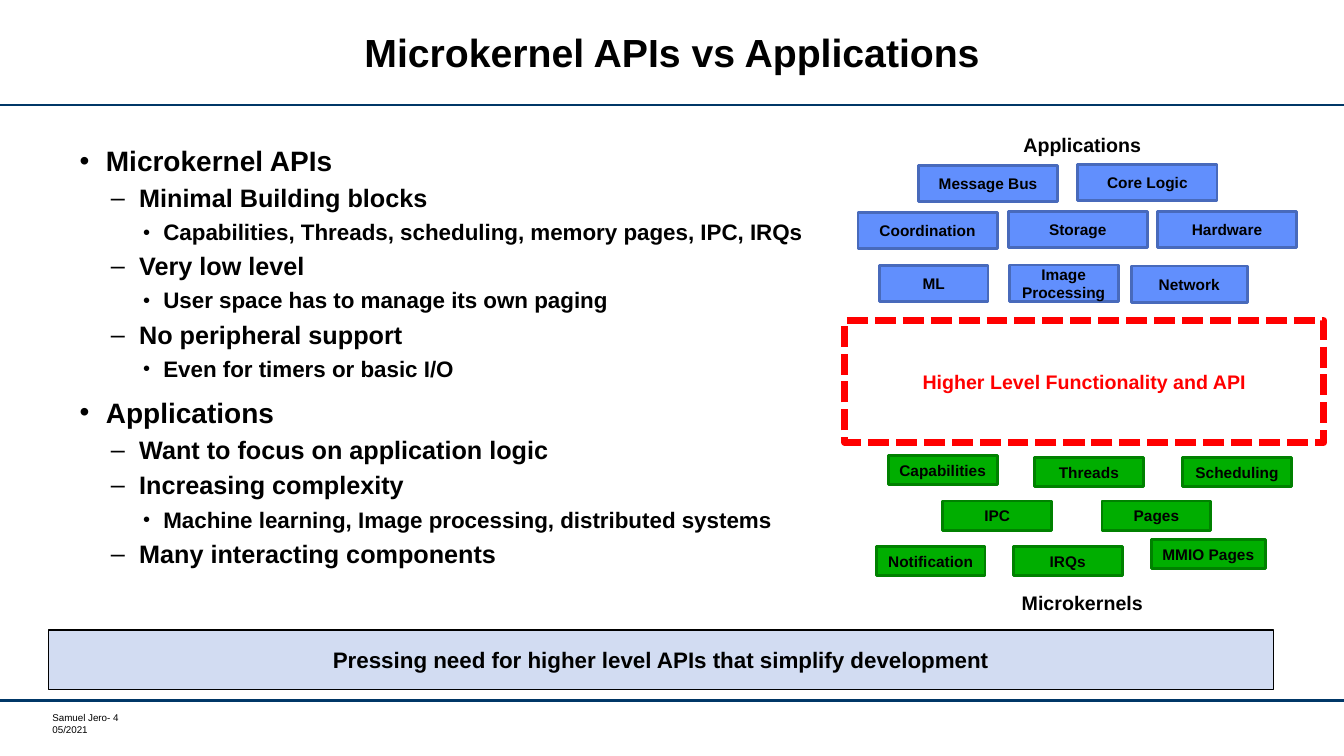
from lxml import etree
from pptx import Presentation
from pptx.dml.color import RGBColor
from pptx.enum.dml import MSO_LINE
from pptx.enum.shapes import MSO_CONNECTOR, MSO_SHAPE
from pptx.enum.text import MSO_ANCHOR, MSO_AUTO_SIZE, PP_ALIGN
from pptx.oxml.ns import qn
from pptx.util import Inches, Pt

RECT, STRAIGHT = MSO_SHAPE.RECTANGLE, MSO_CONNECTOR.STRAIGHT
CENTER, LEFT = PP_ALIGN.CENTER, PP_ALIGN.LEFT
MIDDLE, TOP = MSO_ANCHOR.MIDDLE, MSO_ANCHOR.TOP
NO_FIT, DASH = MSO_AUTO_SIZE.NONE, MSO_LINE.SQUARE_DOT

# Grid of 40 columns by 30 rows
WIDTH, HEIGHT = Inches(13.33), Inches(7.5)
COL, ROW = Inches(1 / 3), Inches(1 / 4)

COLORS = {
    "text": "000000", "rule": "003767", "alert": "FF0000", "banner": "D2DCF2",
    "app": "618FFD", "app_edge": "486ABB",
    "kernel": "00AE00", "kernel_edge": "008100",
}

# Outline levels: font size, space before, left margin, hanging indent, bullet
LEVELS = [
    {"size": 20, "before": 12, "margin": 0.26, "hang": 0.26, "bullet": "•", "scale": 100},
    {"size": 18, "before": 6, "margin": 0.59, "hang": 0.28, "bullet": "–", "scale": 100},
    {"size": 16, "before": 6, "margin": 0.83, "hang": 0.2, "bullet": "•", "scale": 90},
]

OUTLINE = [
    (0, "Microkernel APIs"),
    (1, "Minimal Building blocks"),
    (2, "Capabilities, Threads, scheduling, memory pages, IPC, IRQs"),
    (1, "Very low level"),
    (2, "User space has to manage its own paging"),
    (1, "No peripheral support"),
    (2, "Even for timers or basic I/O"),
    (0, "Applications"),
    (1, "Want to focus on application logic"),
    (1, "Increasing complexity"),
    (2, "Machine learning, Image processing, distributed systems"),
    (1, "Many interacting components"),
]

# Label, column, row, columns wide
APP_HEIGHT, KERNEL_HEIGHT = 1.44, 1.16
APPS = [
    ("Message Bus", 27.33, 6.56, 4.14), ("Core Logic", 32.07, 6.52, 4.14),
    ("Coordination", 25.53, 8.44, 4.14), ("Storage", 30, 8.4, 4.14),
    ("Hardware", 34.44, 8.4, 4.14), ("ML", 26.16, 10.54, 3.24),
    ("Image Processing", 30.03, 10.52, 3.24), ("Network", 33.66, 10.56, 3.45),
]
KERNEL_PARTS = [
    ("Capabilities", 26.43, 18.08, 3.24), ("Threads", 30.78, 18.16, 3.24),
    ("Scheduling", 35.19, 18.16, 3.24), ("IPC", 28.05, 19.88, 3.24),
    ("Pages", 32.79, 19.88, 3.24), ("Notification", 26.07, 21.68, 3.24),
    ("IRQs", 30.15, 21.68, 3.24), ("MMIO Pages", 34.26, 21.4, 3.39),
]


def rgb(name):
    return RGBColor.from_string(COLORS[name])


def cells(col, row, cols, rows):
    return [int(v) for v in (col * COL, row * ROW, cols * COL, rows * ROW)]


def move(s, *area):
    s.left, s.top, s.width, s.height = cells(*area)


def write(p, text, size, color="text", bold=True, align=CENTER):
    p.alignment = align
    r = p.add_run()
    r.text = text
    for name, value in {"name": "Arial", "size": Pt(size), "bold": bold}.items():
        setattr(r.font, name, value)
    r.font.color.rgb = rgb(color)


def format_frame(tf, **values):
    for name, value in values.items():
        setattr(tf, name, value)


def add_rule(slide, row):
    y = int(row * ROW)
    line = slide.shapes.add_connector(STRAIGHT, 0, y, WIDTH, y)
    line.line.color.rgb = rgb("rule")
    line.line.width = Pt(1.75)
    etree.SubElement(line._element.spPr, qn("a:effectLst"))


def add_box(slide, area, text, size, fill, edge, weight, color="text"):
    s = slide.shapes.add_shape(RECT, *cells(*area))
    s.shadow.inherit = False
    if fill:
        s.fill.solid()
        s.fill.fore_color.rgb = rgb(fill)
    else:
        s.fill.background()
    s.line.color.rgb = rgb(edge)
    s.line.width = Pt(weight)
    format_frame(s.text_frame, word_wrap=True, vertical_anchor=MIDDLE,
                 margin_left=Inches(0.05), margin_right=Inches(0.05))
    write(s.text_frame.paragraphs[0], text, size, color)
    return s


def add_label(slide, area, text):
    tf = slide.shapes.add_textbox(*cells(*area)).text_frame
    tf.word_wrap = False
    write(tf.paragraphs[0], text, 14)


def add_footer(slide, area, lines):
    tf = slide.shapes.add_textbox(*cells(*area)).text_frame
    format_frame(tf, word_wrap=True, margin_left=Inches(0.05),
                 margin_right=0, margin_top=0, margin_bottom=0)
    for i, text in enumerate(lines):
        p = tf.add_paragraph() if i else tf.paragraphs[0]
        write(p, text, 7, bold=False, align=LEFT)


def fill_title(s, text):
    move(s, 4.11, 0.44, 31.77, 3.56)
    format_frame(s.text_frame, vertical_anchor=MIDDLE, auto_size=NO_FIT)
    p = s.text_frame.paragraphs[0]
    p.line_spacing = Pt(28)
    write(p, text, 28)


def fill_outline(s, items):
    move(s, 2.07, 5.64, 22.74, 18.92)
    tf = s.text_frame
    format_frame(tf, word_wrap=True, vertical_anchor=TOP, auto_size=NO_FIT)
    for i, (level, text) in enumerate(items):
        p = tf.add_paragraph() if i else tf.paragraphs[0]
        style = LEVELS[level]
        p.level = level
        pPr = p._p.get_or_add_pPr()
        pPr.set("marL", str(Inches(style["margin"])))
        pPr.set("indent", str(-Inches(style["hang"])))
        etree.SubElement(pPr, qn("a:buSzPct"), val=str(style["scale"] * 1000))
        etree.SubElement(pPr, qn("a:buFont"), typeface="Arial")
        etree.SubElement(pPr, qn("a:buChar"), char=style["bullet"])
        p.line_spacing = 0.9
        p.space_before = Pt(style["before"] if i else 0)
        write(p, text, style["size"], align=LEFT)


def main():
    prs = Presentation()
    prs.slide_width, prs.slide_height = WIDTH, HEIGHT
    slide = prs.slides.add_slide(prs.slide_layouts[1])

    # Frame of the slide
    for row in (4.16, 27.8):
        add_rule(slide, row)
    add_footer(slide, (1.41, 28.24, 4.77, 0.96), ["Samuel Jero- 4", "05/2021"])

    # Title, outline and conclusion
    fill_title(slide.shapes.title, "Microkernel APIs vs Applications")
    fill_outline(slide.placeholders[1], OUTLINE)
    add_box(slide, (1.44, 25, 36.45, 2.36),
            "Pressing need for higher level APIs that simplify development",
            16, "banner", "text", 1)

    # Stack diagram: applications, missing layer, microkernels
    add_label(slide, (30.15, 5.08, 4.11, 1.36), "Applications")
    add_label(slide, (30.09, 23.24, 4.23, 1.36), "Microkernels")
    for kind, height, parts in (("app", APP_HEIGHT, APPS),
                                ("kernel", KERNEL_HEIGHT, KERNEL_PARTS)):
        for text, col, row, cols in parts:
            add_box(slide, (col, row, cols, height), text, 11, kind, kind + "_edge", 2)
    layer = add_box(slide, (25.14, 12.72, 14.25, 4.84),
                    "Higher Level Functionality and API", 14, None, "alert", 5, "alert")
    layer.line.dash_style = DASH

    prs.save("out.pptx")


if __name__ == "__main__":
    main()
